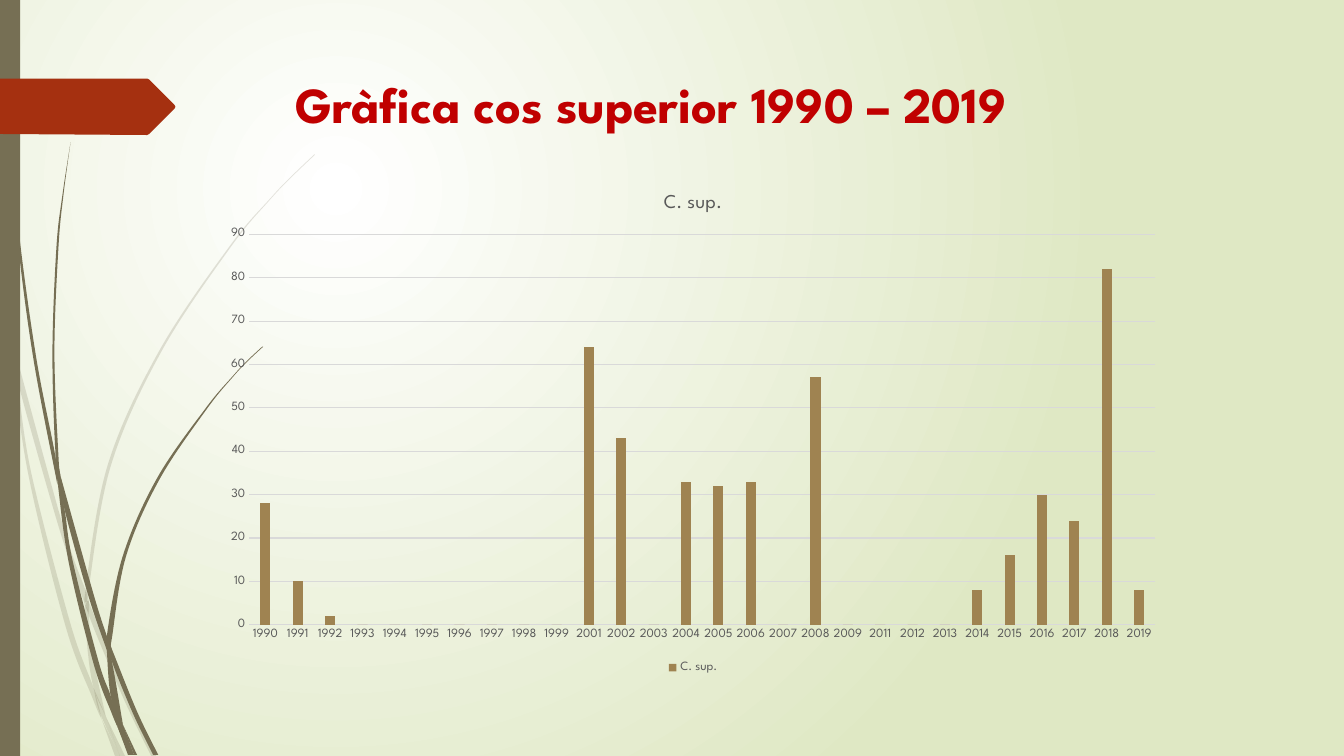
from lxml.etree import SubElement
from pptx import Presentation
from pptx.chart.data import CategoryChartData
from pptx.dml.color import RGBColor
from pptx.enum.chart import XL_CHART_TYPE, XL_LEGEND_POSITION, XL_TICK_MARK
from pptx.enum.shapes import MSO_SHAPE
from pptx.enum.text import MSO_ANCHOR
from pptx.oxml.ns import qn
from pptx.util import Inches, Pt

FONT = "League Spartan"
OLIVE, RUST, RED, TAN = "766F54", "A53010", "C00000", "9F8351"
GREY, RULE = "595959", "D9D9D9"

YEARS = [str(year) for year in range(1990, 2020) if year not in (2000, 2010)]
VALUES = {"1990": 28, "1991": 10, "1992": 2, "2001": 64, "2002": 43,
          "2004": 33, "2005": 32, "2006": 33, "2008": 57, "2014": 8,
          "2015": 16, "2016": 30, "2017": 24, "2018": 82, "2019": 8}

# Each blade of grass: one edge, then the opposite edge, both from top to bottom.
PALE_BLADES = [
    ([(0, 2.82), (0.09, 3.22), (0.11, 3.5)], [(0, 2.99), (0.1, 3.44), (0.11, 3.5)]),
    ([(0.14, 3.45), (0.62, 5.2), (0.85, 5.86)],
     [(0.14, 3.45), (0.17, 3.76), (0.58, 5.22), (0.84, 5.99)]),
    ([(0.88, 5.96), (0.92, 6.07), (1.27, 6.92), (1.55, 7.5)],
     [(0.88, 5.96), (0.88, 6.1), (1.23, 6.94), (1.5, 7.5)]),
    ([(1.05, 7.11), (1.24, 7.5)], [(1.05, 7.11), (1.19, 7.5)]),
    ([(0.11, 3.5), (0.17, 3.76), (0.31, 4.69), (0.7, 6.19), (0.93, 6.83), (1.01, 7.14)],
     [(0.11, 3.5), (0.28, 4.7), (0.65, 6.21), (0.92, 6.93), (1.01, 7.14)]),
    ([(0.84, 5.99), (0.87, 6.46), (0.93, 6.83), (1.05, 7.11)],
     [(0.84, 5.99), (0.88, 6.1), (0.91, 6.46), (1.05, 7.11)]),
    ([(3.12, 1.53), (2.89, 1.75), (2.68, 1.97), (2.28, 2.44), (1.58, 3.48), (1.07, 4.61),
      (0.85, 5.84), (0.88, 5.96)],
     [(3.12, 1.54), (2.9, 1.75), (2.68, 1.98), (2.29, 2.45), (1.6, 3.49), (1.1, 4.62),
      (0.88, 5.84), (0.88, 5.96)]),
    ([(1.01, 7.14), (1.19, 7.5)], [(1.01, 7.14), (1.14, 7.5)]),
    ([(0.85, 5.86), (0.88, 5.96), (0.88, 6.1)], [(0.85, 5.86), (0.84, 5.99), (0.88, 6.08)]),
    ([(0.93, 6.83), (0.99, 7.07), (1.19, 7.5)], [(0.93, 6.83), (1.05, 7.11), (1.19, 7.5)]),
]
DARK_BLADES = [
    ([(0.03, 0), (0.07, 1.1), (0.17, 2.33), (0.33, 3.55), (0.57, 4.81)],
     [(0.04, 0), (0.08, 1.09), (0.19, 2.32), (0.36, 3.55), (0.55, 4.53), (0.57, 4.81)]),
    ([(0.6, 4.72), (0.64, 5.05), (0.88, 5.92), (1.06, 6.45)],
     [(0.6, 4.72), (0.93, 5.9), (1.06, 6.31)]),
    ([(1.1, 6.41), (1.11, 6.56), (1.32, 7.08), (1.52, 7.49)],
     [(1.1, 6.41), (1.13, 6.49), (1.36, 7.06), (1.57, 7.49)]),
    ([(0.57, 4.77), (0.68, 5.57), (0.93, 6.59), (1.11, 7.08), (1.17, 7.22)],
     [(0.57, 4.77), (0.64, 5.05), (0.72, 5.56), (0.98, 6.57), (1.1, 6.91), (1.17, 7.22)]),
    ([(0.7, 1.41), (0.62, 1.93), (0.56, 2.45), (0.52, 3.49), (0.55, 4.49), (0.6, 4.72)],
     [(0.7, 1.41), (0.63, 1.93), (0.58, 2.45), (0.54, 3.49), (0.58, 4.53), (0.6, 4.72)]),
    ([(1.22, 7.19), (1.33, 7.49)], [(1.22, 7.19), (1.36, 7.49)]),
    ([(0.55, 4.49), (0.57, 4.77), (0.64, 5.05)], [(0.55, 4.49), (0.6, 4.72), (0.64, 5.05)]),
    ([(2.6, 3.44), (2.45, 3.58), (2.31, 3.73), (2.04, 4.05), (1.56, 4.74), (1.22, 5.51),
      (1.06, 6.31), (1.1, 6.41)],
     [(2.61, 3.44), (2.45, 3.59), (2.31, 3.74), (2.05, 4.06), (1.58, 4.76), (1.25, 5.52),
      (1.11, 6.33), (1.1, 6.41)]),
    ([(1.17, 7.22), (1.27, 7.49)], [(1.17, 7.22), (1.31, 7.49)]),
    ([(1.06, 6.45), (1.1, 6.91), (1.22, 7.19)], [(1.06, 6.45), (1.11, 6.56), (1.22, 7.19)]),
    ([(1.06, 6.31), (1.06, 6.45), (1.11, 6.56)], [(1.06, 6.31), (1.1, 6.41), (1.11, 6.56)]),
    ([(1.1, 6.91), (1.17, 7.22), (1.3, 7.49)], [(1.1, 6.91), (1.22, 7.19), (1.33, 7.49)]),
]
ARROW = [(0, 0.78), (1.46, 0.78), (1.48, 0.79), (1.73, 1.04), (1.74, 1.06),
         (1.73, 1.08), (1.48, 1.33), (1.46, 1.34), (0, 1.33)]


def color(hex_code):
    return RGBColor.from_string(hex_code)


def style_font(font, size, hex_code, bold=False):
    font.name, font.size, font.bold = FONT, Pt(size), bold
    font.color.rgb = color(hex_code)


def paint(shape, hex_code, opacity=100):
    shape.shadow.inherit = False
    shape.line.fill.background()
    shape.fill.solid()
    shape.fill.fore_color.rgb = color(hex_code)
    if opacity < 100:
        tint = shape._element.spPr.find(qn("a:solidFill"))[0]
        SubElement(tint, qn("a:alpha"), val=str(opacity * 1000))


def set_background(page):
    """Radial gradient from white, centred in the upper left."""
    fill = page.background.fill
    fill.gradient()
    for stop, hex_code, position in zip(fill.gradient_stops, ("FFFFFF", "DFE8C4"), (0, 1)):
        stop.color.rgb = color(hex_code)
        stop.position = position
    gradient = page._element.find(".//" + qn("a:gradFill"))
    gradient.remove(gradient.find(qn("a:lin")))
    circle = SubElement(gradient, qn("a:path"), path="circle")
    SubElement(circle, qn("a:fillToRect"), l="50000", t="50000", r="100000", b="100000")


def add_outline(page, points, hex_code, opacity=100):
    start, *rest = [(Inches(x), Inches(y)) for x, y in points]
    builder = page.shapes.build_freeform(*start)
    builder.add_line_segments(rest, close=True)
    shape = builder.convert_to_shape()
    paint(shape, hex_code, opacity)
    return shape


def bend(segments):
    """Turn a run of straight segments into one smooth curve."""
    knots = [(int(s[-1].get("x")), int(s[-1].get("y"))) for s in segments]
    padded = [knots[0], *knots, knots[-1]]
    for segment, a, b, c, d in zip(segments[1:], padded, padded[1:], padded[2:], padded[3:]):
        segment.tag = qn("a:cubicBezTo")
        controls = ([q + (r - p) / 6 for p, q, r in zip(a, b, c)],
                    [r - (s - q) / 6 for q, r, s in zip(b, c, d)])
        for place, (x, y) in enumerate(controls):
            point = SubElement(segment, qn("a:pt"), x=str(round(x)), y=str(round(y)))
            segment.insert(place, point)


def add_blades(page, blades, opacity):
    for near_edge, far_edge in blades:
        shape = add_outline(page, near_edge + far_edge[::-1], OLIVE, opacity)
        outline = shape._element.find(".//" + qn("a:path"))
        segments = [segment for segment in outline if len(segment)]
        bend(segments[:len(near_edge)])
        bend(segments[len(near_edge):len(near_edge) + len(far_edge)])


def add_title(page, text):
    box = page.shapes.add_textbox(Inches(2.83), Inches(0.68), Inches(9.75), Inches(1.4))
    frame = box.text_frame
    frame.word_wrap = True
    frame.vertical_anchor = MSO_ANCHOR.TOP
    frame.text = text
    style_font(frame.paragraphs[0].runs[0].font, 36, RED, bold=True)


def style_axis(axis):
    axis.major_tick_mark = axis.minor_tick_mark = XL_TICK_MARK.NONE
    style_font(axis.tick_labels.font, 9, GREY)


def style_rule(line):
    line.color.rgb = color(RULE)
    line.width = Pt(0.75)


def add_column_chart(page, name):
    data = CategoryChartData()
    data.categories = YEARS
    data.add_series(name, [VALUES.get(year, 0) for year in YEARS])
    chart = page.shapes.add_chart(
        XL_CHART_TYPE.COLUMN_CLUSTERED, Inches(2.1), Inches(1.72),
        Inches(9.55), Inches(5), data).chart
    style_font(chart.font, 10, "000000")
    chart.has_title = True
    title = chart.chart_title
    title.include_in_layout = False
    title.text_frame.text = name
    style_font(title.text_frame.paragraphs[0].runs[0].font, 14, GREY)
    chart.has_legend = True
    chart.legend.position = XL_LEGEND_POSITION.BOTTOM
    chart.legend.include_in_layout = False
    style_font(chart.legend.font, 9, GREY)
    style_axis(chart.category_axis)
    style_rule(chart.category_axis.format.line)
    values = chart.value_axis
    style_axis(values)
    values.minimum_scale, values.maximum_scale, values.major_unit = 0, 90, 10
    values.format.line.fill.background()
    style_rule(values.major_gridlines.format.line)
    plot = chart.plots[0]
    plot.gap_width, plot.overlap = 219, -27
    plot.vary_by_categories = False
    bars = plot.series[0].format.fill
    bars.solid()
    bars.fore_color.rgb = color(TAN)


def main():
    deck = Presentation()
    deck.slide_width, deck.slide_height = Inches(13.33), Inches(7.5)
    page = deck.slides.add_slide(deck.slide_layouts[6])
    set_background(page)
    add_blades(page, PALE_BLADES, 20)
    add_blades(page, DARK_BLADES, 100)
    paint(page.shapes.add_shape(MSO_SHAPE.RECTANGLE, 0, 0, Inches(0.2), Inches(7.5)), OLIVE)
    add_outline(page, ARROW, RUST)
    add_title(page, "Gràfica cos superior 1990 – 2019")
    add_column_chart(page, "C. sup.")
    deck.save("out.pptx")


if __name__ == "__main__":
    main()
